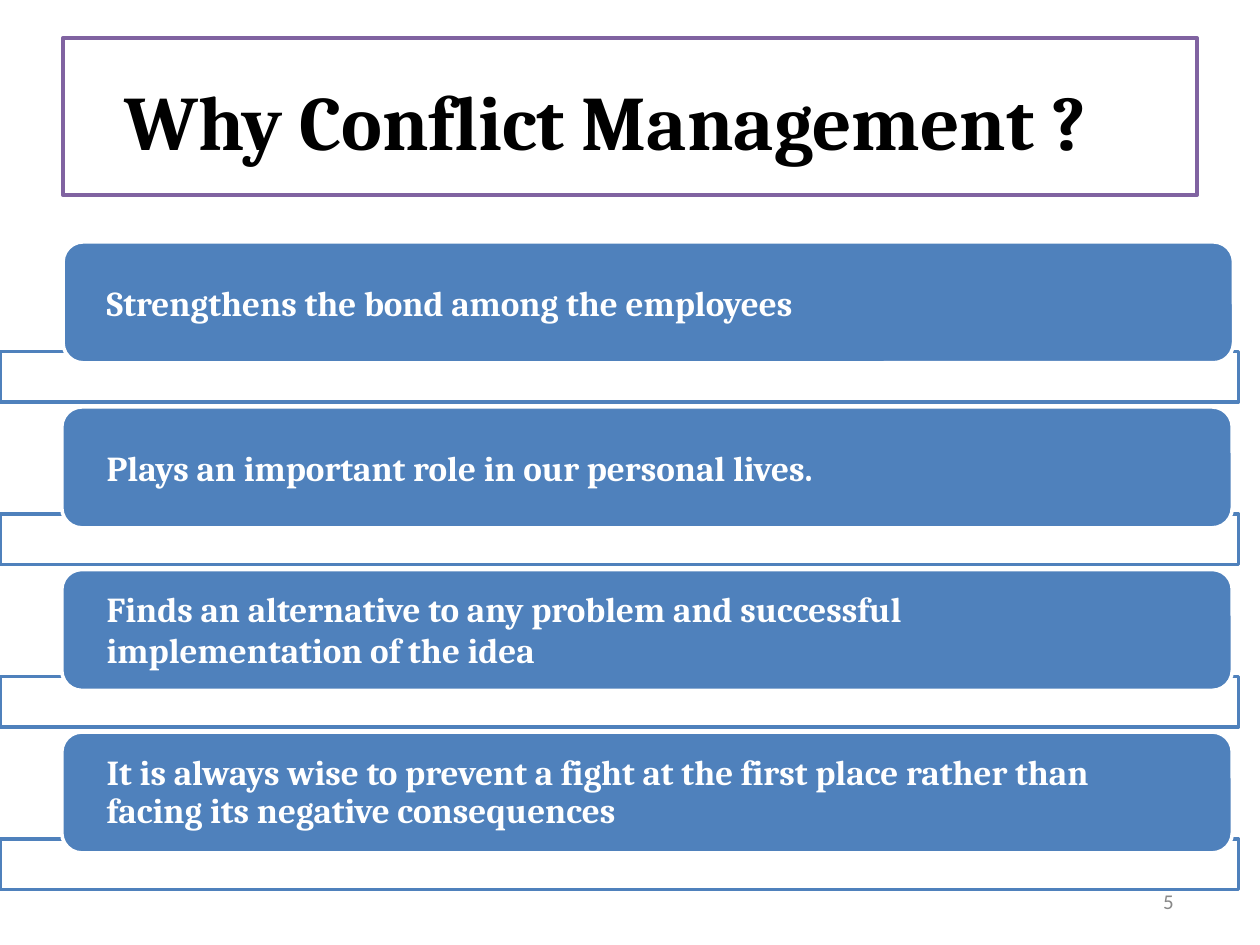
from pptx import Presentation
from pptx.dml.color import RGBColor
from pptx.enum.shapes import MSO_SHAPE
from pptx.enum.text import MSO_ANCHOR, PP_ALIGN
from pptx.util import Inches, Pt

BLACK = RGBColor(0x00, 0x00, 0x00)
WHITE = RGBColor(0xFF, 0xFF, 0xFF)
BLUE = RGBColor(0x4F, 0x81, 0xBC)
PURPLE = RGBColor(0x80, 0x63, 0xA1)
GRAY = RGBColor(0x88, 0x88, 0x88)

deck = Presentation()
deck.slide_width, deck.slide_height = Inches(10), Inches(7.5)
page = deck.slides.add_slide(deck.slide_layouts[6])

# Grid of 100 columns by 75 rows
COLUMN = deck.slide_width / 100
ROW = deck.slide_height / 75


def add_box(kind, left, top, width, height, line, fill=None):
    box = page.shapes.add_shape(kind, int(left * COLUMN), int(top * ROW),
                                int(width * COLUMN), int(height * ROW))
    box.shadow.inherit = False
    if fill is None:
        box.fill.background()
    else:
        box.fill.solid()
        box.fill.fore_color.rgb = fill
    box.line.color.rgb = line
    box.line.width = Pt(2.04)
    return box


def write(box, lines, font, size, color, bold, left=0, top=0, spacing=None):
    frame = box.text_frame
    frame.word_wrap = True
    frame.vertical_anchor = MSO_ANCHOR.MIDDLE
    frame.margin_left, frame.margin_top = int(left * COLUMN), int(top * ROW)
    frame.margin_right = frame.margin_bottom = 0
    for index, line in enumerate(lines):
        para = frame.paragraphs[0] if index == 0 else frame.add_paragraph()
        para.alignment = PP_ALIGN.LEFT
        if spacing:
            para.line_spacing = Pt(spacing)
        span = para.add_run()
        span.text = line
        span.font.name = font
        span.font.size = Pt(size)
        span.font.bold = bold
        span.font.color.rgb = color


# Title
title = add_box(MSO_SHAPE.RECTANGLE, 5, 3, 90, 12.5, PURPLE)
write(title, ["Why Conflict Management ?"], "Cambria", 44, BLACK, True, left=4.9, top=0.5)

# Reasons: each bar overlaps the strip below it
reasons = [
    (["Strengthens the bond among the employees"], None),
    (["Plays an important role in our personal lives."], None),
    (["Finds an alternative to any problem and successful",
      "implementation of the idea"], 22.9),
    (["It is always wise to prevent a fight at the first place rather than",
      "facing its negative consequences"], 21.7),
]
STRIP_TOP, STEP = 27.9, 12.9
for index, (lines, spacing) in enumerate(reasons):
    strip_top = STRIP_TOP + index * STEP
    bar_left, rise = (5, 8.7) if index == 0 else (4.9, 8.5)
    add_box(MSO_SHAPE.RECTANGLE, 0, strip_top, 98.3, 4, BLUE)
    bar = add_box(MSO_SHAPE.ROUNDED_RECTANGLE, bar_left, strip_top - rise,
                  92.9, 9.6, WHITE, BLUE)
    bar.adjustments[0] = 1 / 6
    write(bar, lines, "Cambria", 20, WHITE, True, left=8 - bar_left, spacing=spacing)

# Page number
number = page.shapes.add_textbox(int(91.9 * COLUMN), int(70.7 * ROW),
                                 int(2.5 * COLUMN), int(1.9 * ROW))
write(number, ["5"], "Calibri", 12, GRAY, False, left=0.4, spacing=12.4)

deck.save("out.pptx")
